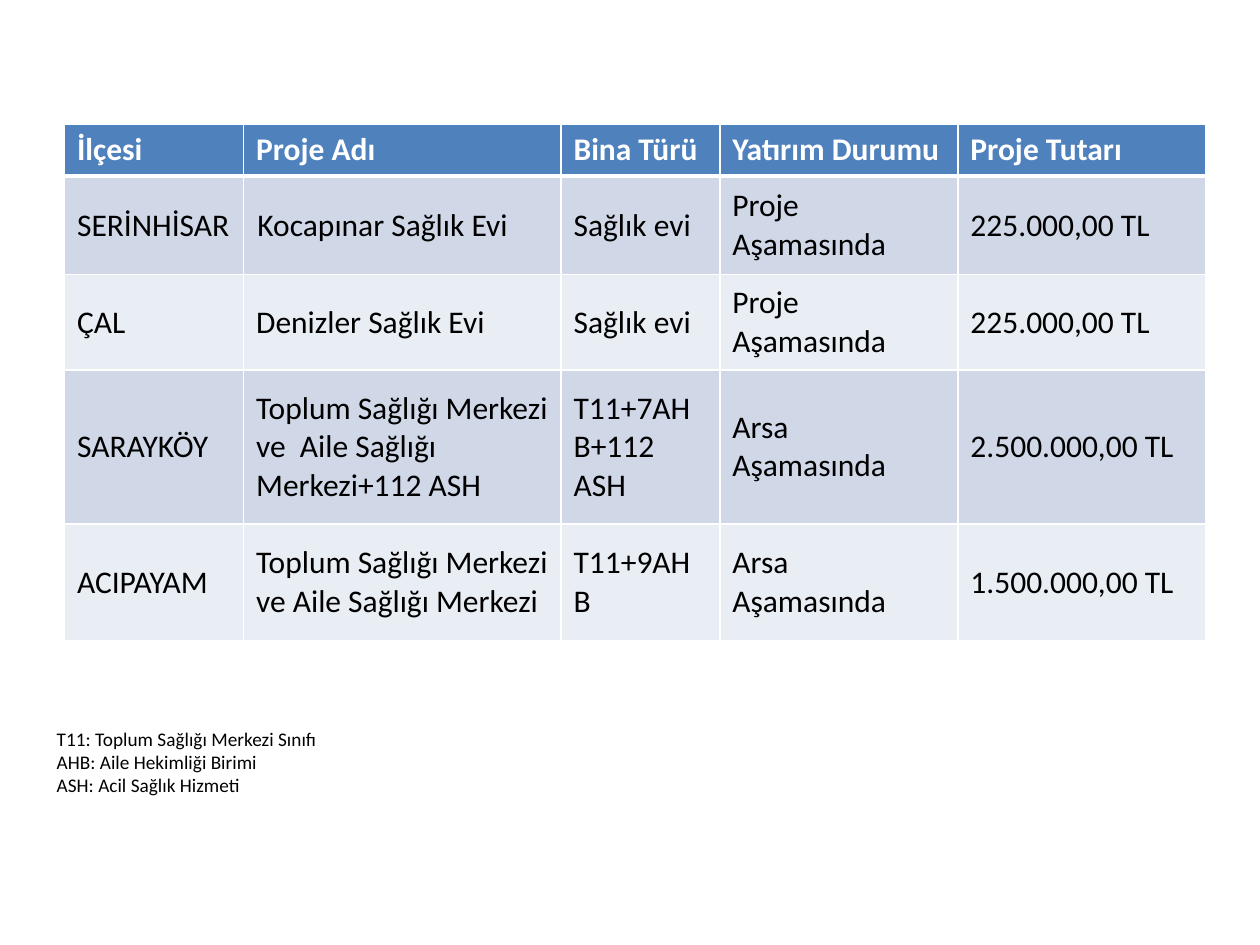
from copy import deepcopy

from lxml import etree
from pptx import Presentation
from pptx import util as u
from pptx.dml.color import RGBColor
from pptx.enum import text
from pptx.oxml import ns

COLUMNS = [3.61, 6.4, 3.2, 4.8, 5]
ROWS = [1.04, 1.98, 1.93, 3.1, 2.36]
HEADER, BANDS = "4F81BD", ["D0D8E8", "E9EDF4"]
PROJECTS = [
    ["İlçesi", "Proje Adı", "Bina Türü", "Yatırım Durumu", "Proje Tutarı"],
    ["SERİNHİSAR", "Kocapınar Sağlık Evi", "Sağlık evi", "Proje Aşamasında", "225.000,00 TL"],
    ["ÇAL", "Denizler Sağlık Evi", "Sağlık evi", "Proje Aşamasında", "225.000,00 TL"],
    ["SARAYKÖY", "Toplum Sağlığı Merkezi ve  Aile Sağlığı Merkezi+112 ASH",
     "T11+7AHB+112 ASH", "Arsa Aşamasında", "2.500.000,00 TL"],
    ["ACIPAYAM", "Toplum Sağlığı Merkezi ve Aile Sağlığı Merkezi",
     "T11+9AHB", "Arsa Aşamasında", "1.500.000,00 TL"],
]
ABBREVIATIONS = [
    "T11: Toplum Sağlığı Merkezi Sınıfı",
    "AHB: Aile Hekimliği Birimi",
    "ASH: Acil Sağlık Hizmeti",
]


def rgb(value):
    return RGBColor.from_string(value)


def write(tf, content, size=18, color="000000", bold=False):
    p = tf.paragraphs[0]
    p.text = content
    p.alignment = text.PP_ALIGN.LEFT
    for r in p.runs:
        r.font.name = "Calibri"
        r.font.size = u.Pt(size)
        r.font.bold = bold
        r.font.color.rgb = rgb(color)
    for br in p._p.findall(ns.qn("a:br")):
        br.append(deepcopy(p.runs[0]._r.rPr))


def set_borders(cell, bottom=1, top=1):
    tcPr = cell._tc.get_or_add_tcPr()
    widths = {"lnL": 1, "lnR": 1, "lnT": top, "lnB": bottom}
    for i, (tag, width) in enumerate(widths.items()):
        ln = etree.Element(ns.qn(f"a:{tag}"), w=str(u.Pt(width)))
        fill = etree.SubElement(ln, ns.qn("a:solidFill"))
        etree.SubElement(fill, ns.qn("a:srgbClr"), val="FFFFFF")
        tcPr.insert(i, ln)


def add_abbreviations(s):
    sp = s.shapes.title
    sp.left, sp.top, sp.width, sp.height = u.Cm(0.89), u.Cm(14.53), u.Cm(22.86), u.Cm(3.18)
    tf = sp.text_frame
    tf.word_wrap = True
    tf.auto_size = text.MSO_AUTO_SIZE.NONE
    tf.vertical_anchor = text.MSO_ANCHOR.TOP
    write(tf, "\v".join(ABBREVIATIONS), size=11)


def add_projects(s):
    table = s.shapes.add_table(len(ROWS), len(COLUMNS), u.Cm(1.3), u.Cm(2.51),
                               u.Cm(sum(COLUMNS)), u.Cm(sum(ROWS))).table
    for column, width in zip(table.columns, COLUMNS):
        column.width = u.Cm(width)
    for i, (row, height) in enumerate(zip(table.rows, ROWS)):
        row.height = u.Cm(height)
        header = i == 0
        for cell, content in zip(row.cells, PROJECTS[i]):
            write(cell.text_frame, content, bold=header, color="FFFFFF" if header else "000000")
            cell.vertical_anchor = text.MSO_ANCHOR.TOP if header else text.MSO_ANCHOR.MIDDLE
            cell.fill.solid()
            cell.fill.fore_color.rgb = rgb(HEADER if header else BANDS[(i - 1) % 2])
            set_borders(cell, bottom=3 if header else 1, top=3 if i == 1 else 1)
    table.cell(1, 1).margin_left = u.Cm(0.28)


def main():
    prs = Presentation()
    prs.slide_width, prs.slide_height = u.Cm(25.4), u.Cm(19.05)
    s = prs.slides.add_slide(prs.slide_layouts[5])
    add_abbreviations(s)
    add_projects(s)
    prs.save("out.pptx")


if __name__ == "__main__":
    main()
